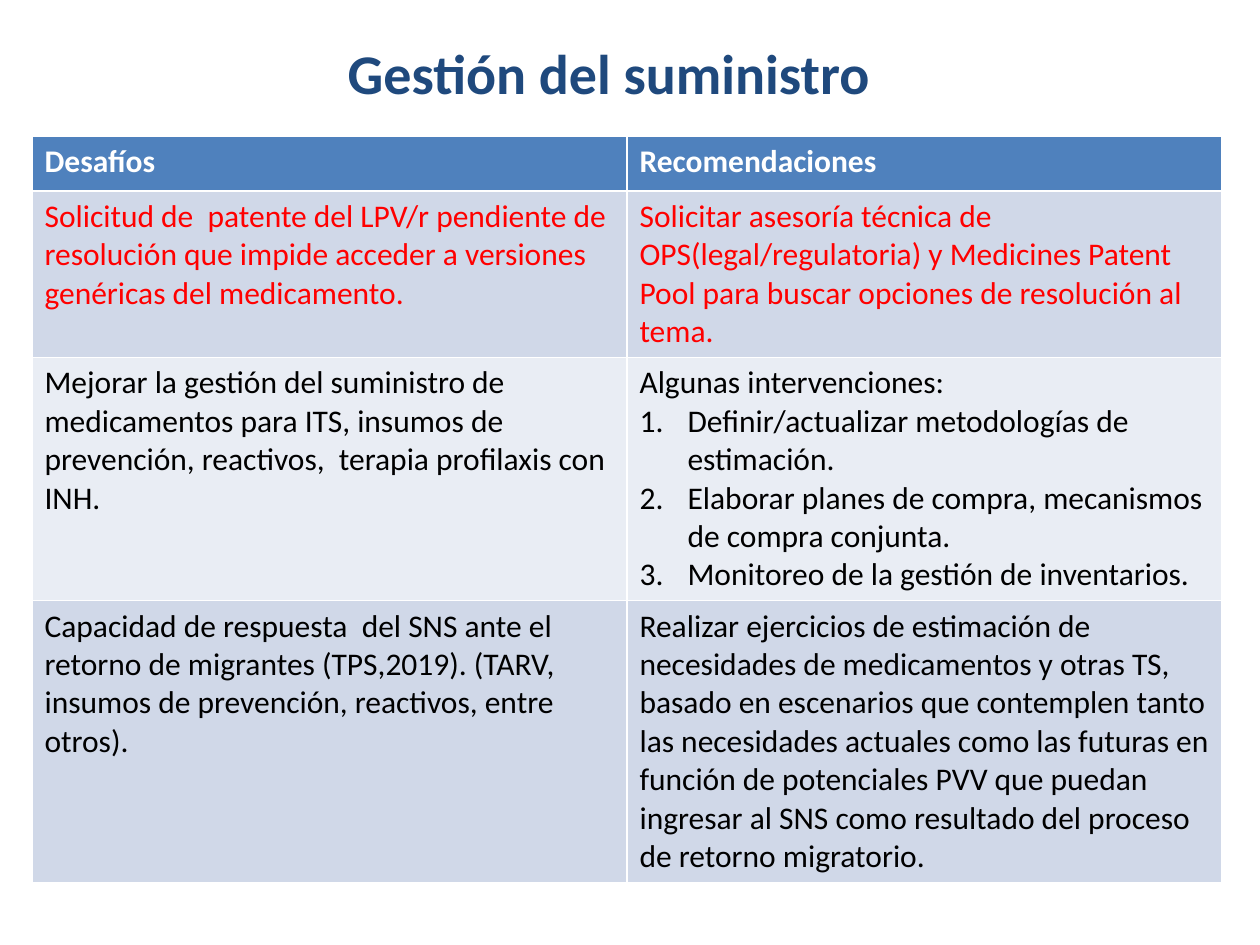
from dataclasses import dataclass

from lxml import etree
from pptx import Presentation
from pptx.dml.color import RGBColor
from pptx.enum.text import MSO_ANCHOR, MSO_AUTO_SIZE, PP_ALIGN
from pptx.oxml.ns import qn
from pptx.table import Table, _Cell
from pptx.text.text import _Paragraph
from pptx.util import Emu, Pt

PX_PER_INCH = 126
FONT = "Calibri"
NAVY = RGBColor(0x1F, 0x49, 0x7D)
BLUE = RGBColor(0x4F, 0x81, 0xBD)
BAND_DARK = RGBColor(0xD0, 0xD8, 0xE8)
BAND_LIGHT = RGBColor(0xE9, 0xED, 0xF4)
WHITE = RGBColor(0xFF, 0xFF, 0xFF)
RED = RGBColor(0xFF, 0x00, 0x00)
BLACK = RGBColor(0x00, 0x00, 0x00)
CENTER = PP_ALIGN.CENTER
MIDDLE = MSO_ANCHOR.MIDDLE
NO_AUTOFIT = MSO_AUTO_SIZE.NONE


@dataclass(frozen=True)
class Topic:
    challenge: str
    recommendation: str
    height: int
    fill: RGBColor
    color: RGBColor = BLACK
    bold: bool = False
    steps: tuple[str, ...] = ()


TOPICS = (
    Topic("Desafíos", "Recomendaciones", 55, BLUE, WHITE, True),
    Topic(
        "Solicitud de  patente del LPV/r pendiente de resolución que impide "
        "acceder a versiones genéricas del medicamento.",
        "Solicitar asesoría técnica de OPS(legal/regulatoria) y Medicines "
        "Patent Pool para buscar opciones de resolución al tema.",
        164, BAND_DARK, RED,
    ),
    Topic(
        "Mejorar la gestión del suministro de medicamentos para ITS, insumos "
        "de prevención, reactivos,  terapia profilaxis con INH.",
        "Algunas intervenciones:",
        240, BAND_LIGHT,
        steps=(
            "Definir/actualizar metodologías de estimación.",
            "Elaborar planes de compra, mecanismos de compra conjunta.",
            "Monitoreo de la gestión de inventarios.",
        ),
    ),
    Topic(
        "Capacidad de respuesta  del SNS ante el retorno de migrantes "
        "(TPS,2019). (TARV, insumos de prevención, reactivos, entre otros).",
        "Realizar ejercicios de estimación de necesidades de medicamentos y "
        "otras TS, basado en escenarios que contemplen tanto las necesidades "
        "actuales como las futuras en función de potenciales PVV que puedan "
        "ingresar al SNS como resultado del proceso de retorno migratorio.",
        277, BAND_DARK,
    ),
)


def px(length: int) -> Emu:
    return Emu(round(length * 914400 / PX_PER_INCH))


def format_runs(paragraph: _Paragraph, size: int, color: RGBColor, bold: bool) -> None:
    for run in paragraph.runs:
        run.font.name = FONT
        run.font.size = Pt(size)
        run.font.color.rgb = color
        run.font.bold = bold


def number_step(paragraph: _Paragraph) -> None:
    properties = paragraph._p.get_or_add_pPr()
    indent = px(48)
    properties.set("marL", str(indent))
    properties.set("indent", str(-indent))
    etree.SubElement(properties, qn("a:buFont"), typeface="+mj-lt")
    etree.SubElement(properties, qn("a:buAutoNum"), type="arabicPeriod")


def fill_cell(cell: _Cell, topic: Topic, text: str, steps: tuple[str, ...] = ()) -> None:
    cell.fill.solid()
    cell.fill.fore_color.rgb = topic.fill
    cell.text_frame.text = text
    for step in steps:
        paragraph = cell.text_frame.add_paragraph()
        paragraph.text = step
        number_step(paragraph)
    for paragraph in cell.text_frame.paragraphs:
        format_runs(paragraph, 18, topic.color, topic.bold)


def fill_table(table: Table) -> None:
    for index, topic in enumerate(TOPICS):
        table.rows[index].height = px(topic.height)
        fill_cell(table.cell(index, 0), topic, topic.challenge)
        fill_cell(table.cell(index, 1), topic, topic.recommendation, topic.steps)


def main() -> None:
    presentation = Presentation()
    presentation.slide_width = px(1260)
    presentation.slide_height = px(945)
    slide = presentation.slides.add_slide(presentation.slide_layouts[5])

    heading = slide.shapes.title
    heading.left, heading.top = px(0), px(32)
    heading.width, heading.height = px(1218), px(80)
    heading.text_frame.text = "Gestión del suministro"
    heading.text_frame.auto_size = NO_AUTOFIT
    heading.text_frame.vertical_anchor = MIDDLE
    heading_line = heading.text_frame.paragraphs[0]
    heading_line.alignment = CENTER
    format_runs(heading_line, 32, NAVY, True)

    total_height = sum(topic.height for topic in TOPICS)
    supply_frame = slide.shapes.add_table(
        len(TOPICS), 2, px(32), px(136), px(1190), px(total_height)
    )
    fill_table(supply_frame.table)
    presentation.save("out.pptx")


if __name__ == "__main__":
    main()
